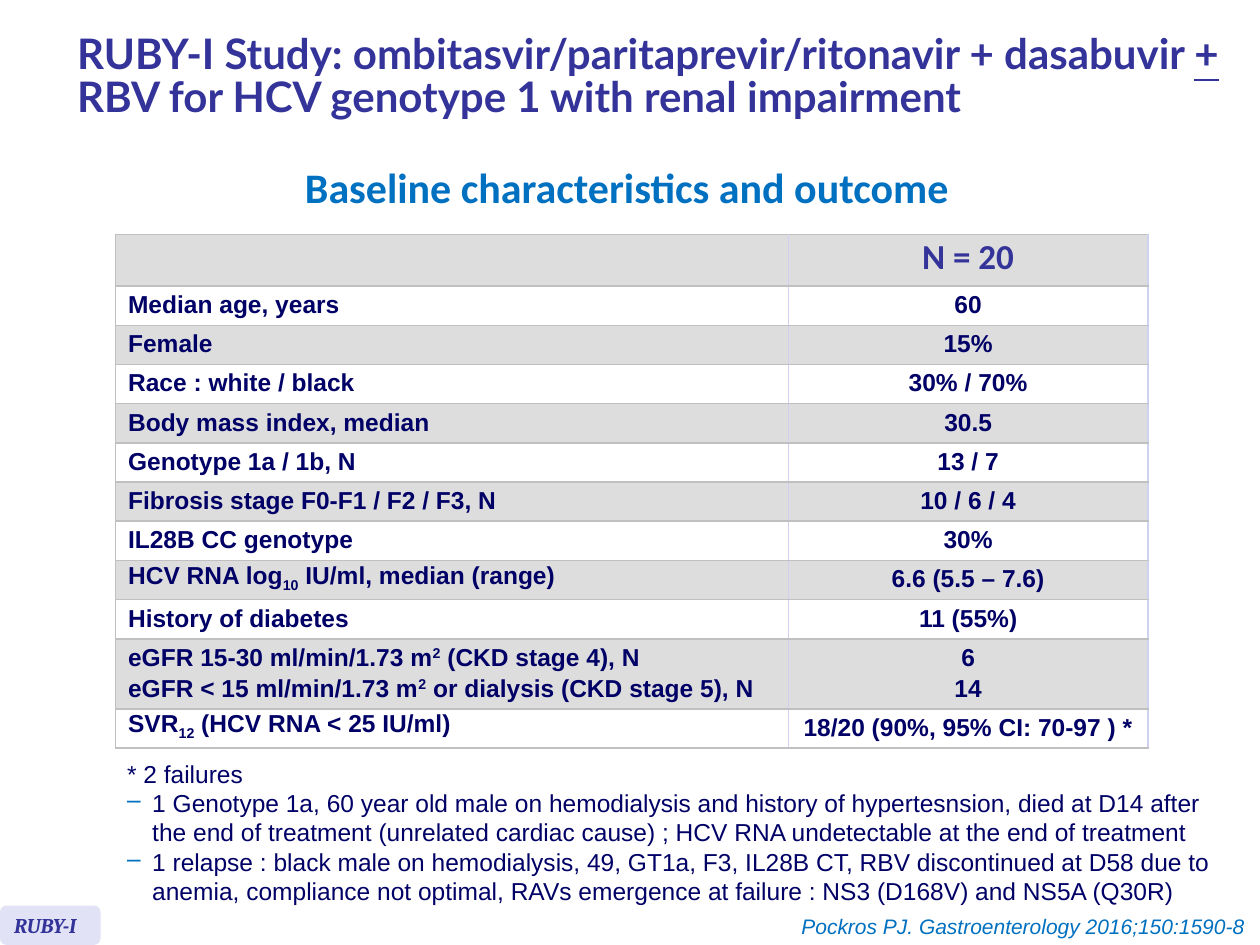
from dataclasses import dataclass

from lxml.etree import SubElement
from pptx import Presentation
from pptx.dml.color import RGBColor
from pptx.enum.shapes import MSO_SHAPE
from pptx.enum.text import MSO_ANCHOR, PP_ALIGN
from pptx.oxml.ns import qn
from pptx.util import Pt


@dataclass(frozen=True)
class Theme:
    indigo: str = "333399"
    navy: str = "000066"
    blue: str = "0070C0"
    lilac: str = "E2E2F6"
    band: str = "DDDDDD"
    white: str = "FFFFFF"
    rule: str = "C0C0C0"
    divider: str = "D0D0F0"
    heading_size: int = 24
    column_size: int = 20
    body_size: int = 14
    small_size: int = 12


THEME = Theme()
SUB, SUPER = -25000, 30000

# Each paragraph is a string, or a list of strings and (string, format) pairs
TITLE = ["RUBY-I Study: ombitasvir/paritaprevir/ritonavir + dasabuvir ",
         ("+", {"underline": True}),
         " RBV for HCV genotype 1 with renal impairment"]
CHARACTERISTICS = [
    (["Median age, years"], ["60"]),
    (["Female"], ["15%"]),
    (["Race : white / black"], ["30% / 70%"]),
    (["Body mass index, median"], ["30.5"]),
    (["Genotype 1a / 1b, N"], ["13 / 7"]),
    (["Fibrosis stage F0-F1 / F2 / F3, N"], ["10 / 6 / 4"]),
    (["IL28B CC genotype"], ["30%"]),
    ([["HCV RNA log", ("10", {"baseline": SUB}), " IU/ml, median (range)"]],
     ["6.6 (5.5 – 7.6)"]),
    (["History of diabetes"], ["11 (55%)"]),
    ([["eGFR 15-30 ml/min/1.73 m", ("2", {"baseline": SUPER}), " (CKD stage 4), N"],
      ["eGFR < 15 ml/min/1.73 m", ("2", {"baseline": SUPER}),
       " or dialysis (CKD stage 5), N"]],
     ["6", "14"]),
    ([["SVR", ("12", {"baseline": SUB}), " (HCV RNA < 25 IU/ml)"]],
     ["18/20 (90%, 95% CI: 70-97 ) *"]),
]
FAILURES = [
    "* 2 failures",
    "1 Genotype 1a, 60 year old male on hemodialysis and history of hypertesnsion, "
    "died at D14 after the end of treatment (unrelated cardiac cause) ; "
    "HCV RNA undetectable at the end of treatment",
    "1 relapse : black male on hemodialysis, 49, GT1a, F3, IL28B CT, "
    "RBV discontinued at D58 due to anemia, compliance not optimal, "
    "RAVs emergence at failure : NS3 (D168V) and NS5A (Q30R)",
]


def add_color(parent, color):
    SubElement(parent, qn("a:srgbClr")).set("val", color)


def add_dash(paragraph, indent=14.4):
    properties = paragraph._p.get_or_add_pPr()
    properties.set("marL", str(Pt(indent)))
    properties.set("indent", str(-Pt(indent)))
    add_color(SubElement(properties, qn("a:buClr")), THEME.blue)
    SubElement(properties, qn("a:buChar")).set("char", "–")


def write(frame, paragraphs, *, size, color, font="Arial", bold=False, italic=False,
          align=PP_ALIGN.LEFT, spacing=None, gap=0, dashed_from=None):
    """Fill a text frame with formatted paragraphs."""
    for index, pieces in enumerate(paragraphs):
        paragraph = frame.add_paragraph() if index else frame.paragraphs[0]
        paragraph.alignment = align
        if spacing:
            paragraph.line_spacing = spacing
        if index and gap:
            paragraph.space_before = Pt(gap)
        if dashed_from is not None and index >= dashed_from:
            add_dash(paragraph)
        for piece in [pieces] if isinstance(pieces, str) else pieces:
            text, extra = (piece, {}) if isinstance(piece, str) else piece
            run = paragraph.add_run()
            run.text = text
            run.font.name, run.font.size = font, Pt(size)
            run.font.bold, run.font.italic = bold, italic
            run.font.color.rgb = RGBColor.from_string(color)
            if "underline" in extra:
                run.font.underline = extra["underline"]
            if "baseline" in extra:
                run._r.get_or_add_rPr().set("baseline", str(extra["baseline"]))


def add_text(slide, box, paragraphs, anchor=MSO_ANCHOR.TOP, **style):
    frame = slide.shapes.add_textbox(*map(Pt, box)).text_frame
    frame.word_wrap = True
    frame.vertical_anchor = anchor
    write(frame, paragraphs, **style)


def add_study_tag(slide, box, label):
    tag = slide.shapes.add_shape(MSO_SHAPE.ROUNDED_RECTANGLE, *map(Pt, box))
    tag.shadow.inherit = False
    tag.fill.solid()
    tag.fill.fore_color.rgb = RGBColor.from_string(THEME.lilac)
    tag.line.fill.background()
    tag.text_frame.vertical_anchor = MSO_ANCHOR.MIDDLE
    write(tag.text_frame, [label], size=THEME.small_size, color=THEME.indigo,
          font="Cambria", bold=True, italic=True)


def style_cell(cell, fill, left_border):
    cell.vertical_anchor = MSO_ANCHOR.MIDDLE
    properties = cell._tc.get_or_add_tcPr()
    borders = {"a:lnL": left_border, "a:lnR": THEME.divider,
               "a:lnT": THEME.rule, "a:lnB": THEME.rule}
    for side, color in borders.items():
        line = SubElement(properties, qn(side), w=str(Pt(1)))
        add_color(SubElement(line, qn("a:solidFill")), color)
    cell.fill.solid()
    cell.fill.fore_color.rgb = RGBColor.from_string(fill)


def add_characteristics(slide, box, widths, header_height, row_height, extra_line):
    rows = [([], ["N = 20"])] + CHARACTERISTICS
    table = slide.shapes.add_table(len(rows), len(widths), *map(Pt, box)).table
    for column, width in zip(table.columns, widths):
        column.width = Pt(width)
    for index, entries in enumerate(rows):
        lines = max(map(len, entries))
        table.rows[index].height = Pt(
            row_height + (lines - 1) * extra_line if index else header_height)
        for position, paragraphs in enumerate(entries):
            cell = table.cell(index, position)
            style_cell(cell, THEME.white if index % 2 else THEME.band,
                       THEME.divider if position else THEME.rule)
            align = PP_ALIGN.CENTER if position else PP_ALIGN.LEFT
            if index:
                write(cell.text_frame, paragraphs, size=THEME.body_size,
                      color=THEME.navy, bold=True, align=align, spacing=Pt(15), gap=2.8)
            else:
                write(cell.text_frame, paragraphs, size=THEME.column_size,
                      color=THEME.indigo, font="Calibri", bold=True, align=align,
                      spacing=Pt(21))


def main():
    presentation = Presentation()
    presentation.slide_width, presentation.slide_height = Pt(720), Pt(540)
    slide = presentation.slides.add_slide(presentation.slide_layouts[6])

    # Headings
    add_text(slide, (37, 6, 681, 77), [TITLE], anchor=MSO_ANCHOR.MIDDLE,
             size=THEME.heading_size, color=THEME.indigo, font="Lato", bold=True,
             spacing=0.85)
    add_text(slide, (76.5, 102.5, 563.5, 25), ["Baseline characteristics and outcome"],
             size=THEME.heading_size, color=THEME.blue, font="Calibri", bold=True,
             align=PP_ALIGN.CENTER, spacing=Pt(15.2))

    # Patient table and its footnote
    add_characteristics(slide, (66, 134, 590, 293.5), widths=(384.5, 205.5),
                        header_height=29.5, row_height=22.4, extra_line=17.6)
    add_text(slide, (65.5, 430, 635, 92), FAILURES, size=THEME.body_size,
             color=THEME.navy, dashed_from=1)

    # Study tag and citation
    add_study_tag(slide, (0, 517.5, 57.5, 22.5), "RUBY-I")
    add_text(slide, (448.5, 518.5, 270, 21.5),
             ["Pockros PJ. Gastroenterology 2016;150:1590-8"], size=THEME.small_size,
             color=THEME.blue, italic=True, align=PP_ALIGN.RIGHT)

    presentation.save("out.pptx")


if __name__ == "__main__":
    main()
